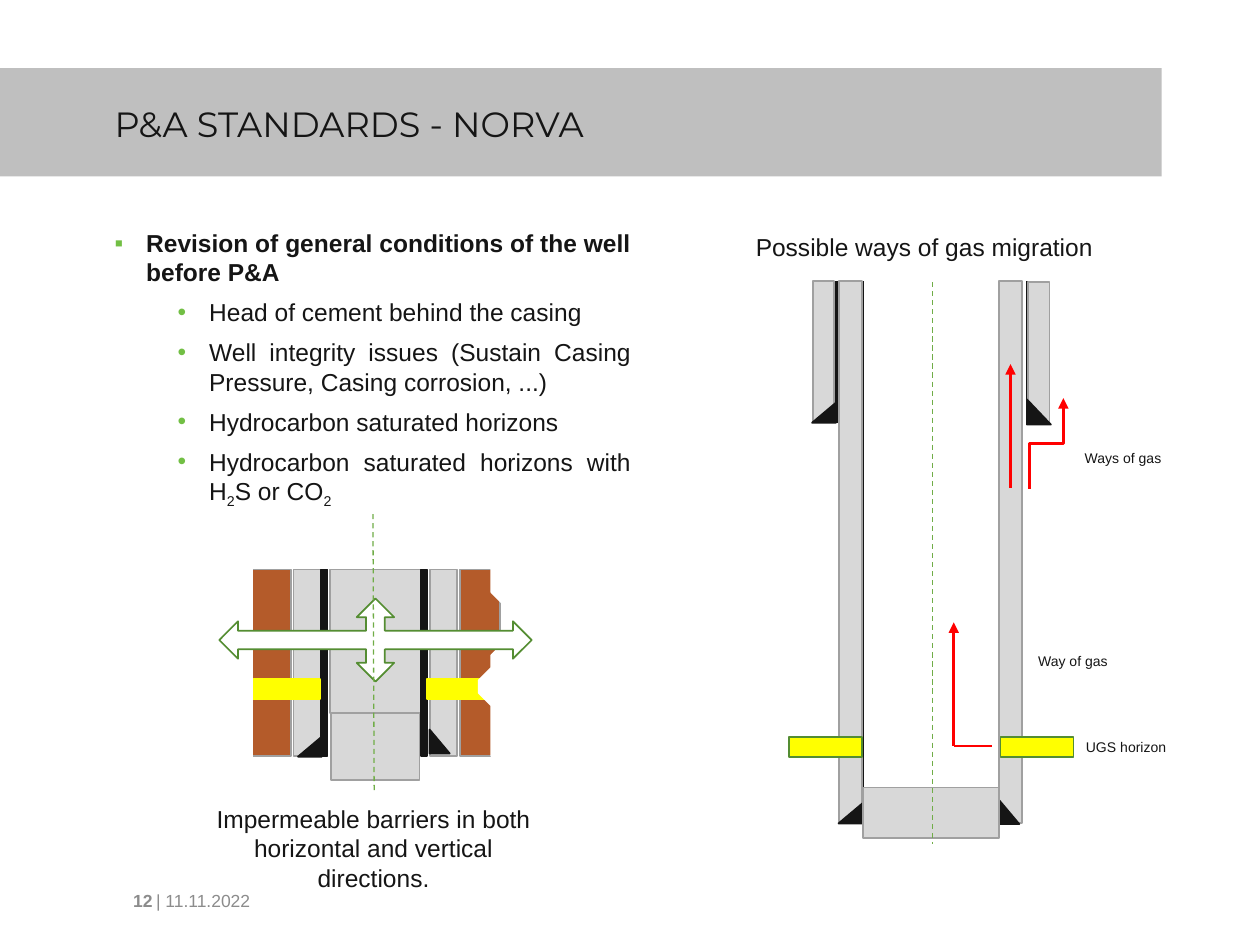
from dataclasses import dataclass
from typing import Optional

from lxml.etree import SubElement
from pptx import Presentation
from pptx.dml.color import RGBColor
from pptx.enum.dml import MSO_LINE
from pptx.enum.shapes import MSO_CONNECTOR as Connector, MSO_SHAPE as Preset
from pptx.enum.text import MSO_ANCHOR as Anchor, MSO_AUTO_SIZE as AutoSize, PP_ALIGN as Align
from pptx.oxml.ns import qn
from pptx.util import Inches, Pt

# Places and sizes count cells of a grid of 100 columns by 75 rows.
COLUMNS, ROWS = 100, 75
CELL = Inches(10) / COLUMNS

INK = RGBColor(0x15, 0x15, 0x15)
WHITE = RGBColor(0xFF, 0xFF, 0xFF)
BAND = RGBColor(0xBF, 0xBF, 0xBF)
FOOTER = RGBColor(0x8C, 0x8C, 0x8C)
STEEL = RGBColor(0xD8, 0xD8, 0xD8)
STEEL_EDGE = RGBColor(0xA0, 0xA0, 0xA0)
ROCK = RGBColor(0xB4, 0x5B, 0x2A)
GAS = RGBColor(0xFF, 0xFF, 0x00)
GREEN = RGBColor(0x54, 0x8D, 0x32)
AXIS = RGBColor(0x70, 0xAD, 0x47)
RED = RGBColor(0xFF, 0x00, 0x00)
BULLET = "72BF44"


@dataclass
class Part:
    left: float
    top: float
    width: float
    height: float
    fill: RGBColor = STEEL
    edge: RGBColor = STEEL_EDGE
    preset: Preset = Preset.RECTANGLE
    rotation: float = 0


@dataclass
class Line:
    start: tuple
    end: tuple
    color: RGBColor
    width: float = 1.5
    arrow: bool = False
    dashed: bool = False
    elbow: bool = False


@dataclass
class Label:
    text: str
    left: float
    top: float
    width: float
    height: float
    size: int = 8
    color: RGBColor = INK
    bold: bool = False
    align: Align = Align.LEFT
    anchor: Anchor = Anchor.TOP


def cement(left: float, top: float, mirrored: bool, width=1.6, height=1.9) -> Part:
    """Cement wedge at a casing shoe."""
    return Part(left, top, width, height, INK, INK, Preset.RIGHT_TRIANGLE, 270 if mirrored else 0)


WELL_LINES = [Line((x, 22.3), (x, bottom), INK)
              for x, bottom in ((66.4, 33.6), (81.5, 33.6), (68.5, 65.4), (79.3, 65.4))]
WELL_PARTS = [
    Part(79.3, 22.3, 1.8, 43), cement(79.3, 63.5, False),
    Part(81.6, 22.4, 1.7, 11.2), cement(81.5, 31.7, False, 1.9, 2),
    Part(66.6, 22.3, 1.8, 43), cement(66.7, 63.6, True),
    Part(62.6, 58.5, 5.8, 1.6, GAS, GREEN),
    Part(64.5, 22.3, 1.7, 11.2), cement(64.6, 31.8, True),
    Part(68.5, 62.5, 10.8, 4),
    Part(79.4, 58.5, 5.8, 1.6, GAS, GREEN),
]
GAS_PATHS = [
    Line((80.2, 38.7), (80.2, 28.9), RED, arrow=True),
    Line((81.7, 38.8), (84.4, 31.6), RED, arrow=True, elbow=True),
    Line((75.7, 59.2), (75.7, 49.4), RED, arrow=True),
    Line((75.7, 59.2), (78.7, 59.2), RED),
]
BARRIER_TOP, BARRIER_HEIGHT = 45.2, 14.8
BARRIER_PARTS = [
    *(Part(x, BARRIER_TOP, 2.2, BARRIER_HEIGHT) for x in (23.3, 34.1)),
    Part(26.2, BARRIER_TOP, 7.3, 11.4),
    *(Part(x, BARRIER_TOP, 0.5, BARRIER_HEIGHT, INK, INK) for x in (25.5, 33.4)),
    Part(26.3, 56.6, 7, 5.3),
    cement(23.8, 58.3, True), cement(34.1, 57.9, False),
    Part(19.5, BARRIER_TOP, 3.6, BARRIER_HEIGHT, ROCK),
    Part(19.6, 53.9, 5.8, 1.6, GAS, GAS),
    Part(36.5, BARRIER_TOP, 3.2, BARRIER_HEIGHT, ROCK),
    Part(33.9, 53.9, 5.8, 1.6, GAS, GAS),
]
BARRIER_ARROWS = Part(17.4, 47.5, 24.8, 6.6, WHITE, GREEN, Preset.QUAD_ARROW)
ROCK_EROSION = [
    [(19.9, 44.1), (20.1, 44.9), (20.2, 46.2), (19.9, 49.7), (19.5, 50.5), (19.9, 51.6),
     (20.2, 52.7), (20.1, 54.1), (19.9, 54.4), (20, 56.3), (20.2, 56.6), (20.5, 59.8),
     (19.8, 60.8), (18.7, 60.9), (18.2, 57.1), (17.8, 55), (17.9, 46.7), (18.5, 45.5)],
    [(39.6, 44.6), (39.1, 45), (38.9, 45.6), (39, 47.1), (39.4, 47.4), (39.6, 47.6),
     (39.8, 49.9), (39.5, 51.2), (39.3, 51.8), (39.2, 52.9), (38.8, 53.2), (37.9, 54),
     (37.8, 54.3), (38.2, 55), (38.6, 55.5), (38.8, 56.2), (39, 57.4), (38.9, 59.9),
     (39.7, 60.8), (40.7, 60.8), (41, 60), (41.5, 58.2), (41.7, 52.5), (41.9, 47.5),
     (41.7, 45.6), (40.9, 45)],
]
AXES = [Line((74, 22.4), (74, 67), AXIS, 0.75, dashed=True),
        Line((29.6, 40.8), (29.7, 63), AXIS, 0.75, dashed=True)]
LABELS = [
    Label("| 11.11.2022", 11.4, 69.5, 22.5, 4, 10, FOOTER, anchor=Anchor.MIDDLE),
    Label("12", 8.1, 69.5, 5, 4, 10, FOOTER, True, Align.RIGHT, Anchor.MIDDLE),
    Label("Possible ways of gas migration", 59, 17.9, 29.7, 3.4, 14, align=Align.JUSTIFY),
    Label("UGS horizon", 85.2, 58.1, 10, 2.4),
    Label("Ways of gas", 85.1, 35.2, 10, 2.4),
    Label("Way of gas", 81.4, 51.3, 10, 2.4),
    Label("Impermeable barriers in both horizontal and vertical directions.",
          14.8, 63.3, 29.7, 8.1, 14, align=Align.CENTER),
]
# Each item is a list of runs; a run of digits is set as a subscript.
CONDITIONS = [
    ["Revision of general conditions of the well before P&A"],
    ["Head of cement behind the casing"],
    ["Well integrity issues (Sustain Casing Pressure, Casing corrosion, ...)"],
    ["Hydrocarbon saturated horizons"],
    ["Hydrocarbon saturated horizons with H", "2", "S or CO", "2"],
]


def cells(*counts: float) -> list:
    return [round(count * CELL) for count in counts]


def apply(target, **values) -> None:
    for name, value in values.items():
        setattr(target, name, value)


def place(shape, left: float, top: float, width: float, height: float) -> None:
    apply(shape, **dict(zip(("left", "top", "width", "height"), cells(left, top, width, height))))


def add_run(paragraph, text: str, size: int, color=INK, bold=False, name="Arial"):
    run = paragraph.add_run()
    run.text = text
    apply(run.font, size=Pt(size), bold=bold, name=name)
    run.font.color.rgb = color
    return run


def paint(shape, fill: RGBColor, edge: Optional[RGBColor]) -> None:
    shape.shadow.inherit = False
    shape.fill.solid()
    shape.fill.fore_color.rgb = fill
    if edge is None:
        shape.line.fill.background()
    else:
        shape.line.color.rgb = edge
        shape.line.width = Pt(1)


def draw_part(shapes, part: Part) -> None:
    shape = shapes.add_shape(part.preset, *cells(part.left, part.top, part.width, part.height))
    shape.rotation = part.rotation
    paint(shape, part.fill, part.edge)


def draw_line(shapes, line: Line) -> None:
    (x1, y1), (x2, y2) = line.start, line.end
    kind = Connector.STRAIGHT
    if line.elbow:
        # A quarter turn makes the elbow leave upwards instead of sideways.
        kind = Connector.ELBOW
        middle_x, middle_y = (x1 + x2) / 2, (y1 + y2) / 2
        half_width, half_height = (y1 - y2) / 2, (x2 - x1) / 2
        x1, x2 = middle_x - half_width, middle_x + half_width
        y1, y2 = middle_y - half_height, middle_y + half_height
    connector = shapes.add_connector(kind, *cells(x1, y1, x2, y2))
    connector.line.color.rgb = line.color
    connector.line.width = Pt(line.width)
    properties = connector._element.spPr
    if line.elbow:
        properties.find(qn("a:xfrm")).set("rot", str(270 * 60000))
    if line.dashed:
        connector.line.dash_style = MSO_LINE.DASH
    if line.arrow:
        SubElement(properties.find(qn("a:ln")), qn("a:tailEnd"), type="triangle")
    SubElement(properties, qn("a:effectLst"))


def draw_outline(shapes, points: list) -> None:
    builder = shapes.build_freeform(*points[0], scale=CELL)
    builder.add_line_segments(points[1:], close=True)
    paint(builder.convert_to_shape(), WHITE, WHITE)


def draw_label(shapes, label: Label) -> None:
    box = shapes.add_textbox(*cells(label.left, label.top, label.width, label.height))
    apply(box.text_frame, word_wrap=True, vertical_anchor=label.anchor)
    paragraph = box.text_frame.paragraphs[0]
    paragraph.alignment = label.align
    add_run(paragraph, label.text, label.size, label.color, label.bold)


def add_bullet(paragraph, character: str, indent: float) -> None:
    properties = paragraph._p.get_or_add_pPr()
    properties.set("marL", str(Inches(indent)))
    properties.set("indent", str(Inches(-0.25)))
    SubElement(SubElement(properties, qn("a:buClr")), qn("a:srgbClr"), val=BULLET)
    SubElement(properties, qn("a:buFont"), typeface="Arial")
    SubElement(properties, qn("a:buChar"), char=character)


def fill_title(title) -> None:
    place(title, 0, 5.4, 92.2, 8.6)
    paint(title, BAND, None)
    left, top, right, bottom = cells(9.1, 3.1, 1, 2.4)
    apply(title.text_frame, margin_left=left, margin_top=top, margin_right=right,
          margin_bottom=bottom, vertical_anchor=Anchor.TOP, auto_size=AutoSize.NONE)
    paragraph = title.text_frame.paragraphs[0]
    apply(paragraph, alignment=Align.LEFT, line_spacing=0.9)
    add_run(paragraph, "P&A STANDARDS - NORVA", 20, name="Montserrat")


def fill_conditions(body) -> None:
    place(body, 8.1, 17.6, 43, 23.2)
    frame = body.text_frame
    apply(frame, auto_size=AutoSize.NONE, vertical_anchor=Anchor.TOP)
    for index, texts in enumerate(CONDITIONS):
        heading = index == 0
        paragraph = frame.paragraphs[0] if heading else frame.add_paragraph()
        add_bullet(paragraph, "▪" if heading else "•", 0.25 if heading else 0.75)
        apply(paragraph, level=0 if heading else 1, alignment=Align.JUSTIFY,
              space_before=Pt(0 if heading else 6))
        for text in texts:
            run = add_run(paragraph, text, 14, bold=heading)
            if text.isdigit():
                run._r.get_or_add_rPr().set("baseline", "-25000")


def main() -> None:
    presentation = Presentation()
    apply(presentation, slide_width=round(COLUMNS * CELL), slide_height=round(ROWS * CELL))
    slide = presentation.slides.add_slide(presentation.slide_layouts[1])
    fill_title(slide.shapes.title)
    fill_conditions(slide.placeholders[1])
    layers = [(draw_line, WELL_LINES), (draw_part, WELL_PARTS), (draw_line, GAS_PATHS),
              (draw_part, BARRIER_PARTS), (draw_outline, ROCK_EROSION),
              (draw_part, [BARRIER_ARROWS]), (draw_label, LABELS), (draw_line, AXES)]
    for draw, items in layers:
        for item in items:
            draw(slide.shapes, item)
    presentation.save("out.pptx")


if __name__ == "__main__":
    main()
